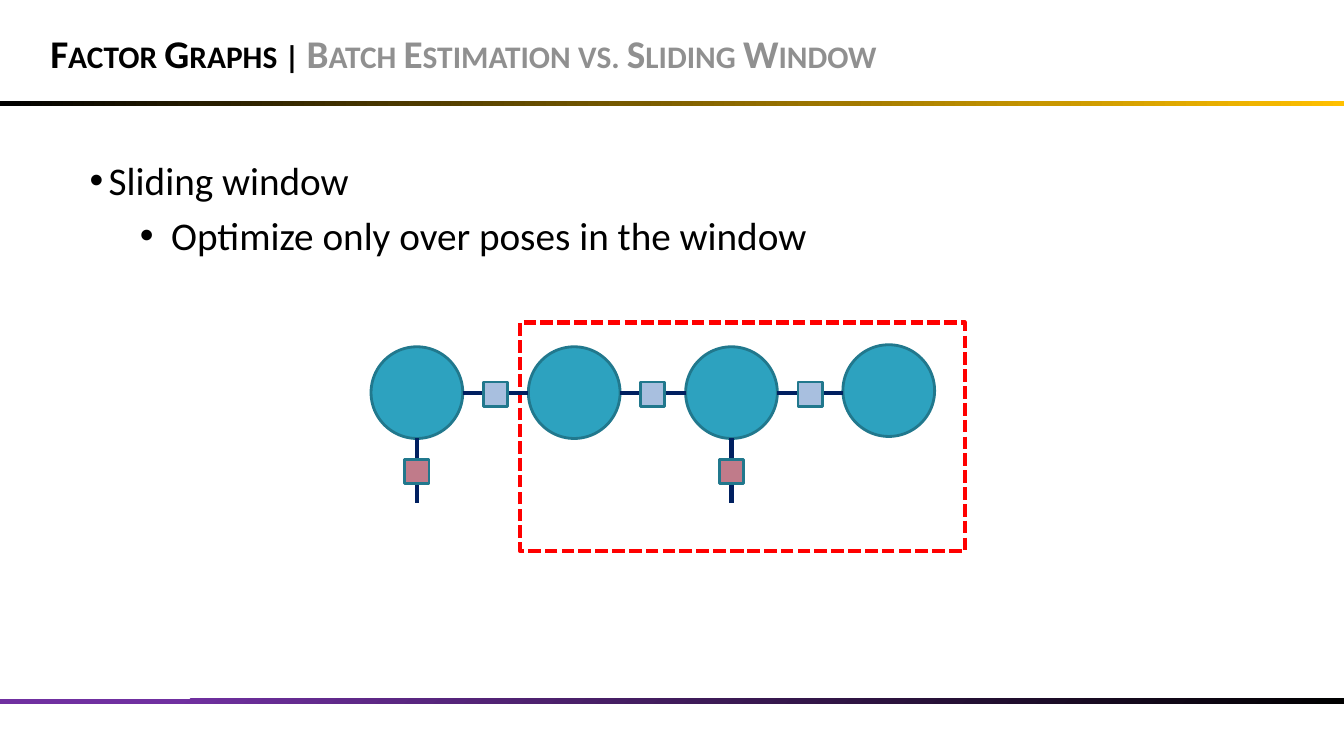
import pptx
import pptx.dml.color
import pptx.enum.dml
import pptx.enum.shapes
import pptx.enum.text
import pptx.oxml
import pptx.oxml.ns
import pptx.util
from dataclasses import dataclass

Inches = pptx.util.Inches
Pt = pptx.util.Pt
RGB = pptx.dml.color.RGBColor.from_string
MSO_SHAPE = pptx.enum.shapes.MSO_SHAPE


@dataclass(frozen=True)
class Theme:
    font: str = "Calibri"
    text_size: int = 28
    text: str = "000000"
    subtitle: str = "909090"
    gold: str = "FFC000"
    purple: str = "7030A0"
    pose: str = "2DA2BF"
    outline: str = "21788D"
    link: str = "002060"
    odometry: str = "A8BFDF"
    measurement: str = "C07B8A"
    window: str = "FF0000"


theme = Theme()
prs = pptx.Presentation()
prs.slide_width, prs.slide_height = Inches(13.33), Inches(7.5)
slide = prs.slides.add_slide(prs.slide_layouts[6])


def add_node(kind, left, top, size, color):
    """Add a filled, outlined pose or factor of the graph."""
    node = slide.shapes.add_shape(kind, Inches(left), Inches(top), Inches(size), Inches(size))
    node.shadow.inherit = False
    node.fill.solid()
    node.fill.fore_color.rgb = RGB(color)
    node.line.color.rgb = RGB(theme.outline)
    node.line.width = Pt(2)


def add_link(x1, y1, x2, y2):
    link = slide.shapes.add_connector(
        pptx.enum.shapes.MSO_CONNECTOR.STRAIGHT, Inches(x1), Inches(y1), Inches(x2), Inches(y2))
    link.line.color.rgb = RGB(theme.link)
    link.line.width = Pt(3)
    link._element.spPr.append(pptx.oxml.parse_xml(
        f"<a:effectLst {pptx.oxml.ns.nsdecls('a')}/>"))


# Header and footer rules
for top, angle, stops in (
    (1, 0, ((0, theme.text), (1, theme.gold))),
    (6.93, 315, ((0.13, theme.purple), (1, theme.text))),
):
    rule = slide.shapes.add_shape(
        MSO_SHAPE.RECTANGLE, 0, Inches(top), prs.slide_width, Inches(0.05))
    rule.shadow.inherit = False
    rule.line.fill.background()
    rule.fill.gradient()
    rule.fill.gradient_angle = angle
    for stop, (position, color) in zip(rule.fill.gradient_stops, stops):
        stop.position = position
        stop.color.rgb = RGB(color)

# Title
title = slide.shapes.add_textbox(Inches(0.4), Inches(0.05), Inches(8.99), Inches(0.94)).text_frame
title.word_wrap = True
title.vertical_anchor = pptx.enum.text.MSO_ANCHOR.MIDDLE
for part, color in (
    ("Factor Graphs | ", theme.text),
    ("Batch Estimation vs. Sliding Window", theme.subtitle),
):
    run = title.paragraphs[0].add_run()
    run.text = part
    run.font.name = theme.font
    run.font.size = Pt(theme.text_size)
    run.font.bold = True
    run.font.color.rgb = RGB(color)
    run._r.get_or_add_rPr().set("cap", "small")

# Bullets
bullets = slide.shapes.add_textbox(
    Inches(0.79), Inches(1.5), Inches(11.67), Inches(4.67)).text_frame
bullets.word_wrap = True
bullets.text = "Sliding window\nOptimize only over poses in the window"
for level, (paragraph, margin, hanging) in enumerate(
        zip(bullets.paragraphs, (0.19, 0.81), (0.19, 0.31))):
    paragraph.level = level
    if level:
        paragraph.space_before = Pt(5.6)
    properties = paragraph._p.get_or_add_pPr()
    properties.set("marL", str(Inches(margin)))
    properties.set("indent", str(-Inches(hanging)))
    for bullet in ('buFont typeface="Arial"', 'buChar char="•"'):
        properties.append(pptx.oxml.parse_xml(
            f"<a:{bullet} {pptx.oxml.ns.nsdecls('a')}/>"))
    font = paragraph.runs[0].font
    font.name = theme.font
    font.size = Pt(theme.text_size)
    font.color.rgb = RGB(theme.text)

# Sliding window
window = slide.shapes.add_shape(
    MSO_SHAPE.RECTANGLE, Inches(5.16), Inches(3.2), Inches(4.41), Inches(2.27))
window.shadow.inherit = False
window.fill.background()
window.line.color.rgb = RGB(theme.window)
window.line.width = Pt(3)
window.line.dash_style = pptx.enum.dml.MSO_LINE.SQUARE_DOT

# Factor graph
POSE, FACTOR = 0.91, 0.24
FIRST_LEFT, PITCH, POSE_TOP, LINK_Y = 3.68, 1.56, 3.44, 3.9
pose_lefts = [FIRST_LEFT + i * PITCH for i in range(4)]

for left, top in zip(pose_lefts, (POSE_TOP, POSE_TOP, POSE_TOP, 3.42)):
    add_node(MSO_SHAPE.OVAL, left, top, POSE, theme.pose)

for left, next_left in zip(pose_lefts, pose_lefts[1:]):
    add_link(left + POSE, LINK_Y, next_left, LINK_Y)
    middle = (left + POSE + next_left) / 2
    add_node(MSO_SHAPE.RECTANGLE, middle - FACTOR / 2, 3.79, FACTOR, theme.odometry)

for left in pose_lefts[::2]:
    center = left + POSE / 2
    add_link(center, POSE_TOP + POSE, center, 4.99)
    add_node(MSO_SHAPE.RECTANGLE, center - FACTOR / 2, 4.56, FACTOR, theme.measurement)

prs.save("out.pptx")
